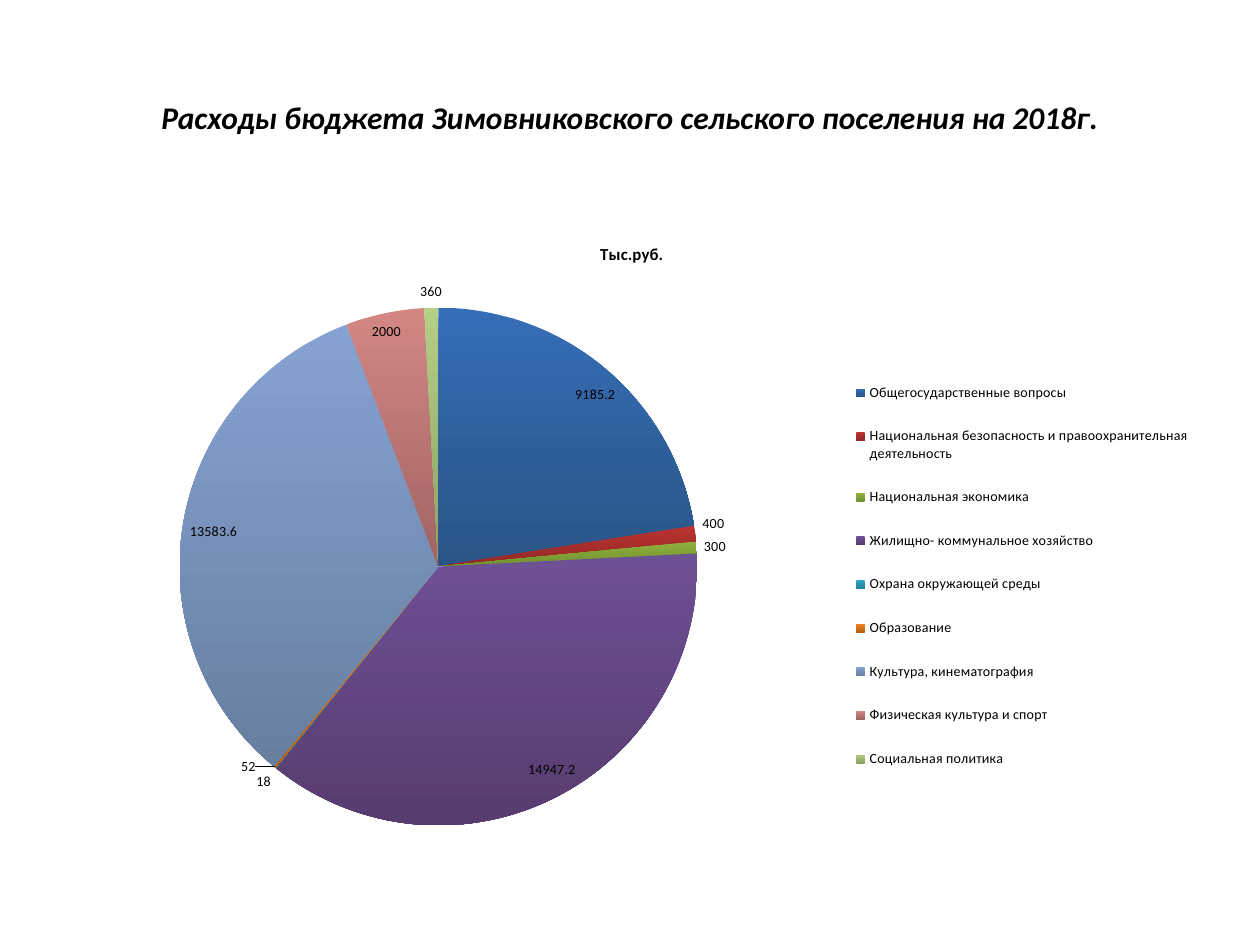
import pptx
import pptx.chart.data
import pptx.dml.color
import pptx.enum.chart
import pptx.enum.text
import pptx.oxml
import pptx.util

Pt = pptx.util.Pt
RGB = pptx.dml.color.RGBColor
BLACK = RGB(0, 0, 0)
FONT = "Calibri"

# Each row: label, value, top and bottom colour of the slice
ROWS = [
    ("Общегосударственные вопросы", 9185.2, RGB(0x35, 0x6D, 0xB7), RGB(0x2A, 0x55, 0x86)),
    ("Национальная безопасность и правоохранительная деятельность", 400,
     RGB(0xBB, 0x34, 0x31), RGB(0x92, 0x28, 0x25)),
    ("Национальная экономика", 300, RGB(0x8F, 0xB1, 0x3E), RGB(0x71, 0x91, 0x2F)),
    ("Жилищно- коммунальное хозяйство", 14947.2, RGB(0x6E, 0x50, 0x94), RGB(0x57, 0x3C, 0x70)),
    ("Охрана окружающей среды", 18, RGB(0x2F, 0xA4, 0xC3), RGB(0x22, 0x83, 0x9F)),
    ("Образование", 52, RGB(0xF5, 0x80, 0x20), RGB(0xB8, 0x62, 0x0F)),
    ("Культура, кинематография", 13583.6, RGB(0x86, 0xA2, 0xD2), RGB(0x67, 0x7E, 0x9F)),
    ("Физическая культура и спорт", 2000, RGB(0xD3, 0x87, 0x85), RGB(0xA0, 0x64, 0x63)),
    ("Социальная политика", 360, RGB(0xB5, 0xCF, 0x85), RGB(0x8C, 0xA0, 0x64)),
]


def style(font, size, bold=False):
    font.name = FONT
    font.size = Pt(size)
    font.bold = bold
    font.color.rgb = BLACK


def place(part, x, y, size=(), inner=False):
    """Give a chart part a manual layout, in fractions of the chart."""
    for old in part.findall(pptx.oxml.ns.qn("c:layout")):
        part.remove(old)
    tags = '<c:layoutTarget val="inner"/>' if inner else ""
    tags += '<c:xMode val="edge"/><c:yMode val="edge"/>'
    for key, val in zip("xywh", (x, y, *size)):
        tags += f'<c:{key} val="{val}"/>'
    node = pptx.oxml.parse_xml(
        f'<c:layout {pptx.oxml.ns.nsdecls("c")}><c:manualLayout>{tags}'
        '</c:manualLayout></c:layout>')
    part.insert(0 if inner else 1, node)


deck = pptx.Presentation()
deck.slide_width, deck.slide_height = Pt(720), Pt(540)
slide = deck.slides.add_slide(deck.slide_layouts[6])

# Heading
box = slide.shapes.add_textbox(Pt(36), Pt(21.6), Pt(648), Pt(90))
frame = box.text_frame
frame.word_wrap = True
frame.vertical_anchor = pptx.enum.text.MSO_ANCHOR.MIDDLE
para = frame.paragraphs[0]
para.alignment = pptx.enum.text.PP_ALIGN.CENTER
run = para.add_run()
run.text = "Расходы бюджета Зимовниковского сельского поселения на 2018г."
style(run.font, 18, True)
run.font.italic = True

# Pie chart
data = pptx.chart.data.CategoryChartData()
data.categories = [row[0] for row in ROWS]
data.add_series("Тыс.руб.", [row[1] for row in ROWS])
chart = slide.shapes.add_chart(
    pptx.enum.chart.XL_CHART_TYPE.PIE,
    Pt(36.7), Pt(122.4), Pt(648), Pt(356.4), data).chart
style(chart.font, 8)
plot = chart.plots[0]
plot.vary_by_categories = True
place(chart.plots[0]._element.getparent(), 0.1, 0.15, (0.46, 0.83), True)

# Slices shaded from top to bottom
for i, (name, val, top, base) in enumerate(ROWS):
    fill = plot.series[0].points[i].format.fill
    fill.gradient()
    fill.gradient_angle = 270
    for stop, tone in zip(fill.gradient_stops, (top, base)):
        stop.color.rgb = tone

# Value labels
plot.has_data_labels = True
labels = plot.data_labels
labels.show_value = True
labels.show_percentage = False
labels.position = pptx.enum.chart.XL_LABEL_POSITION.BEST_FIT
style(labels.font, 8)

# Chart title
chart.has_title = True
run = chart.chart_title.text_frame.paragraphs[0].add_run()
run.text = "Тыс.руб."
style(run.font, 9.6, True)
place(chart.chart_title._element, 0.47, 0.04)

# Legend
chart.has_legend = True
legend = chart.legend
legend.position = pptx.enum.chart.XL_LEGEND_POSITION.RIGHT
legend.include_in_layout = False
style(legend.font, 8)
place(legend._element, 0.69, 0.23, (0.31, 0.7))

deck.save("out.pptx")
